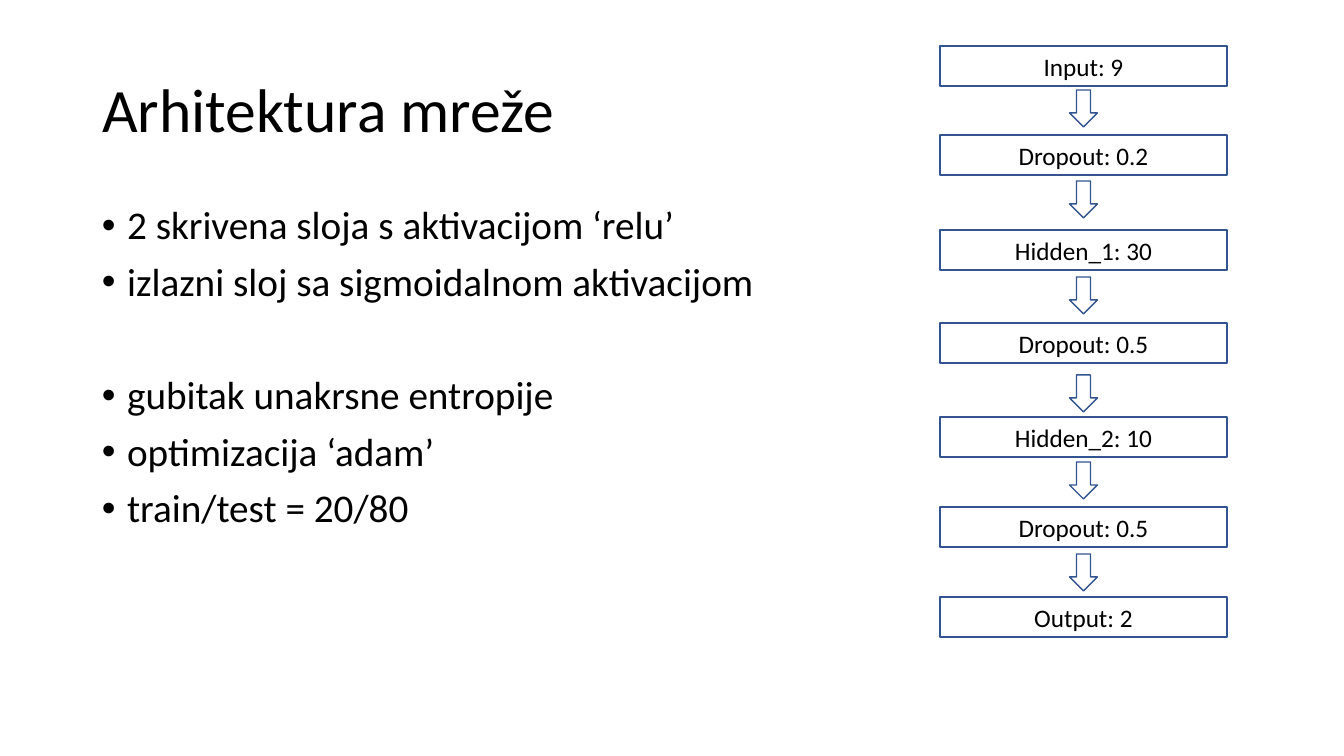
from lxml import etree
from pptx import Presentation
from pptx import util as u
from pptx.dml.color import RGBColor
from pptx.enum import shapes, text
from pptx.oxml.ns import qn

TITLE = "Arhitektura mreže"
BULLET_GROUPS = [
    ["2 skrivena sloja s aktivacijom ‘relu’",
     "izlazni sloj sa sigmoidalnom aktivacijom"],
    ["gubitak unakrsne entropije",
     "optimizacija ‘adam’",
     "train/test = 20/80"],
]
# (label, top of the box)
LAYERS = [
    ("Input: 9", 46),
    ("Dropout: 0.2", 135),
    ("Hidden_1: 30", 230),
    ("Dropout: 0.5", 323),
    ("Hidden_2: 10", 417),
    ("Dropout: 0.5", 507),
    ("Output: 2", 597),
]
ARROW_TOPS = [90, 181, 277, 375, 462, 554]

COLORS = {"ink": "000000", "fill": "FFFFFF", "line": "325491"}
FONT = "Calibri"
SLIDE_W, SLIDE_H = 1344, 756
EMU_PER_PX = 12192000 / SLIDE_W
TITLE_BOX = (92, 40, 1159, 146)
BODY_BOX = (92, 201, 1159, 480)
LAYER_LEFT, LAYER_W, LAYER_H = 940, 287, 40
ARROW_W, ARROW_H = 28, 37
BULLET_GAP, GROUP_GAP = 10, 51
INDENT = u.Inches(0.25)


def px(length):
    return u.Emu(round(length * EMU_PER_PX))


def color(name):
    return RGBColor.from_string(COLORS[name])


def assign(target, values):
    for name, value in values.items():
        setattr(target, name, value)


def write(paragraph, words, size, **layout):
    run = paragraph.add_run()
    run.text = words
    assign(run.font, {"name": FONT, "size": u.Pt(size)})
    run.font.color.rgb = color("ink")
    assign(paragraph, layout)


def add_bullet(paragraph):
    props = paragraph._p.get_or_add_pPr()
    props.set("marL", str(INDENT))
    props.set("indent", str(-INDENT))
    etree.SubElement(props, qn("a:buFont")).set("typeface", "Arial")
    etree.SubElement(props, qn("a:buChar")).set("char", "•")


def add_outlined(slide, kind, *box):
    shape = slide.shapes.add_shape(kind, *map(px, box))
    shape.shadow.inherit = False
    shape.fill.solid()
    shape.fill.fore_color.rgb = color("fill")
    shape.line.color.rgb = color("line")
    shape.line.width = u.Pt(1)
    return shape


def add_title(slide):
    title = slide.shapes.title
    assign(title, dict(zip(("left", "top", "width", "height"), map(px, TITLE_BOX))))
    assign(title.text_frame, {"word_wrap": True,
                              "auto_size": text.MSO_AUTO_SIZE.NONE,
                              "vertical_anchor": text.MSO_ANCHOR.MIDDLE})
    write(title.text_frame.paragraphs[0], TITLE, 44,
          alignment=text.PP_ALIGN.LEFT, line_spacing=0.9)


def add_body(slide):
    body = slide.shapes.add_textbox(*map(px, BODY_BOX)).text_frame
    body.word_wrap = True
    for group_no, group in enumerate(BULLET_GROUPS):
        for item_no, item in enumerate(group):
            starts_body = group_no == item_no == 0
            starts_group = group_no > 0 and item_no == 0
            bullet = body.paragraphs[0] if starts_body else body.add_paragraph()
            gap = GROUP_GAP if starts_group else BULLET_GAP
            write(bullet, item, 28, line_spacing=0.9, space_before=u.Pt(gap))
            add_bullet(bullet)


def add_network(slide):
    for label, top in LAYERS:
        layer = add_outlined(slide, shapes.MSO_SHAPE.RECTANGLE,
                             LAYER_LEFT, top, LAYER_W, LAYER_H)
        layer.text_frame.vertical_anchor = text.MSO_ANCHOR.MIDDLE
        write(layer.text_frame.paragraphs[0], label, 18,
              alignment=text.PP_ALIGN.CENTER)
    arrow_left = LAYER_LEFT + (LAYER_W - ARROW_W) / 2
    for top in ARROW_TOPS:
        add_outlined(slide, shapes.MSO_SHAPE.DOWN_ARROW,
                     arrow_left, top, ARROW_W, ARROW_H)


def main():
    deck = Presentation()
    assign(deck, {"slide_width": px(SLIDE_W), "slide_height": px(SLIDE_H)})
    slide = deck.slides.add_slide(deck.slide_layouts.get_by_name("Title Only"))
    add_title(slide)
    add_body(slide)
    add_network(slide)
    deck.save("out.pptx")


if __name__ == "__main__":
    main()
